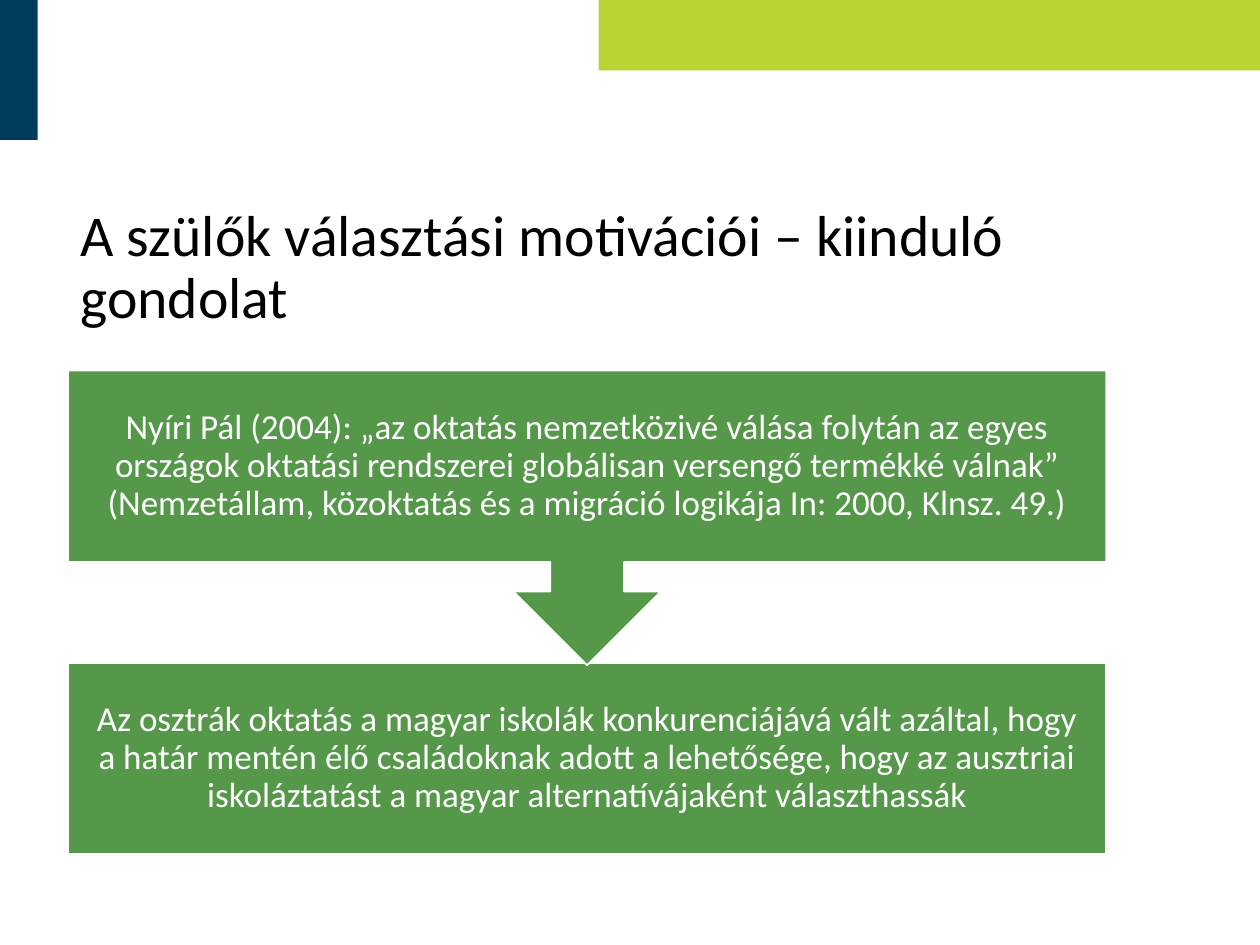
from dataclasses import dataclass

from pptx import Presentation
from pptx.dml.color import RGBColor
from pptx.enum.shapes import MSO_SHAPE
from pptx.enum.text import MSO_ANCHOR, PP_ALIGN
from pptx.util import Cm, Pt


@dataclass(frozen=True)
class Theme:
    font: str = "Calibri"
    title_size: int = 33
    body_size: int = 20
    lime: str = "B9D531"
    navy: str = "003D5B"
    green: str = "55984A"
    white: str = "FFFFFF"
    black: str = "000000"


THEME = Theme()

TITLE = "A szülők választási motivációi – kiinduló gondolat"
QUOTE = (
    "Nyíri Pál (2004): „az oktatás nemzetközivé válása folytán az egyes "
    "országok oktatási rendszerei globálisan versengő termékké válnak” "
    "(Nemzetállam, közoktatás és a migráció logikája In: 2000, Klnsz. 49.)"
)
CONSEQUENCE = (
    "Az osztrák oktatás a magyar iskolák konkurenciájává vált azáltal, hogy "
    "a határ mentén élő családoknak adott a lehetősége, hogy az ausztriai "
    "iskoláztatást a magyar alternatívájaként választhassák"
)
BARS = [
    ((12.07, 0, 13.33, 1.42), THEME.lime),
    ((-0.03, 0, 0.79, 2.82), THEME.navy),
]

SLIDE_SIZE = (25.4, 19.05)
LEFT, WIDTH = 1.37, 20.93
TITLE_TOP, TITLE_HEIGHT = 3.58, 3.68
QUOTE_TOP, CALLOUT_HEIGHT = 7.47, 5.94
CONSEQUENCE_TOP, BOX_HEIGHT = 13.36, 3.86
TITLE_INSETS = (0.25, 0.13)
BODY_INSETS = (0.41, 0.41)


def add_block(slide, preset, box, fill, outlined=False):
    shape = slide.shapes.add_shape(preset, *map(Cm, box))
    shape.shadow.inherit = False
    shape.fill.solid()
    shape.fill.fore_color.rgb = RGBColor.from_string(fill)
    if outlined:
        shape.line.color.rgb = RGBColor.from_string(THEME.white)
        shape.line.width = Pt(1)
    else:
        shape.line.fill.background()
    return shape


def write_text(shape, text, size, color, alignment, insets):
    frame = shape.text_frame
    frame.word_wrap = True
    frame.vertical_anchor = MSO_ANCHOR.MIDDLE
    frame.margin_left = frame.margin_right = Cm(insets[0])
    frame.margin_top = frame.margin_bottom = Cm(insets[1])
    paragraph = frame.paragraphs[0]
    paragraph.text = text
    paragraph.alignment = alignment
    paragraph.line_spacing = 0.9
    paragraph.font.name = THEME.font
    paragraph.font.size = Pt(size)
    paragraph.font.color.rgb = RGBColor.from_string(color)


def add_text_box(slide, top, height):
    return slide.shapes.add_textbox(Cm(LEFT), Cm(top), Cm(WIDTH), Cm(height))


def main():
    presentation = Presentation()
    presentation.slide_width, presentation.slide_height = map(Cm, SLIDE_SIZE)
    slide = presentation.slides.add_slide(presentation.slide_layouts[6])

    for box, color in BARS:
        add_block(slide, MSO_SHAPE.RECTANGLE, box, color)

    title = add_text_box(slide, TITLE_TOP, TITLE_HEIGHT)
    write_text(title, TITLE, THEME.title_size, THEME.black, PP_ALIGN.LEFT, TITLE_INSETS)

    consequence = add_block(
        slide, MSO_SHAPE.RECTANGLE,
        (LEFT, CONSEQUENCE_TOP, WIDTH, BOX_HEIGHT), THEME.green, outlined=True,
    )
    callout = add_block(
        slide, MSO_SHAPE.UP_ARROW_CALLOUT,
        (LEFT, QUOTE_TOP, WIDTH, CALLOUT_HEIGHT), THEME.green, outlined=True,
    )
    callout.rotation = 180
    quote = add_text_box(slide, QUOTE_TOP, BOX_HEIGHT)

    for shape, text in [(consequence, CONSEQUENCE), (quote, QUOTE)]:
        write_text(shape, text, THEME.body_size, THEME.white, PP_ALIGN.CENTER, BODY_INSETS)

    presentation.save("out.pptx")


if __name__ == "__main__":
    main()
